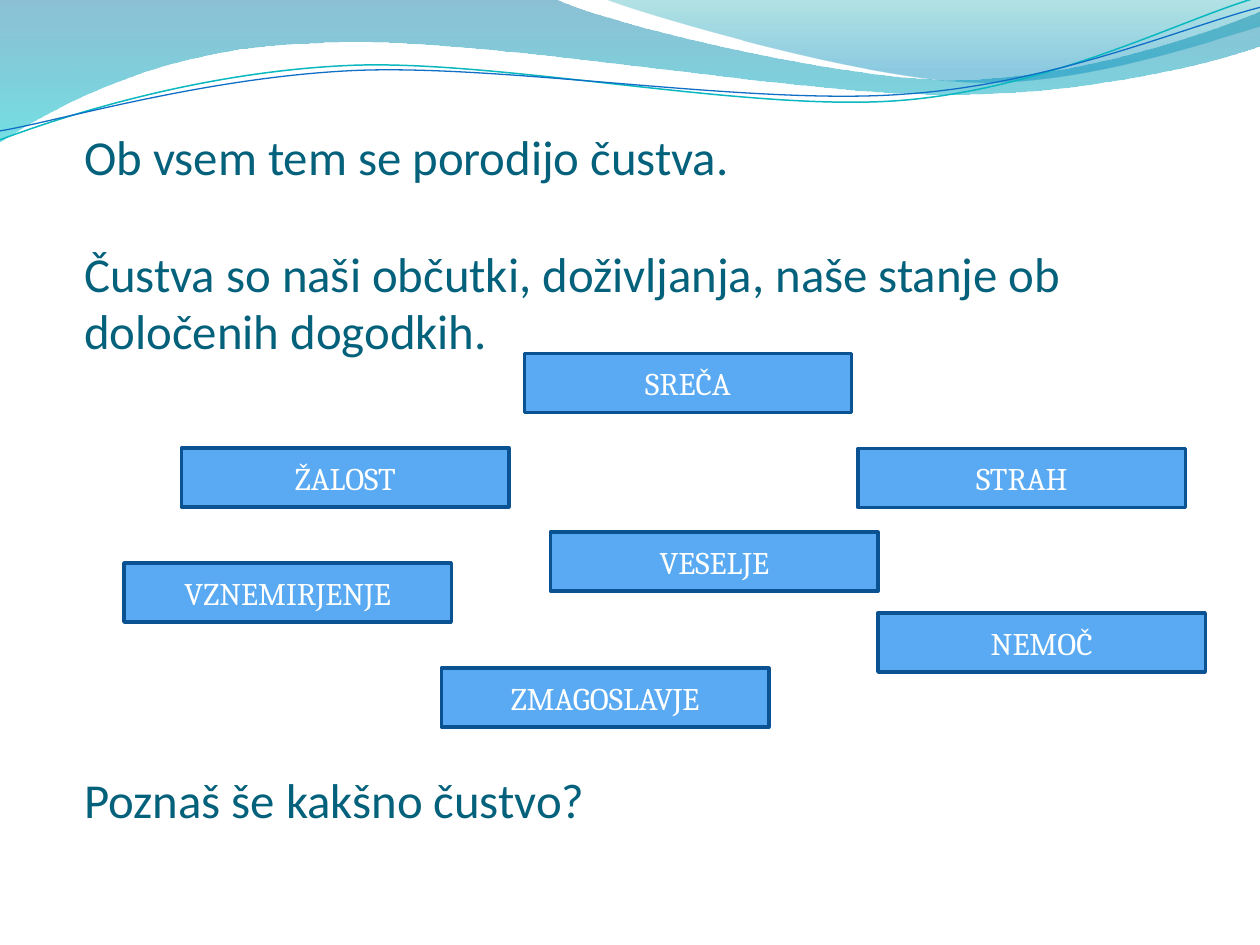
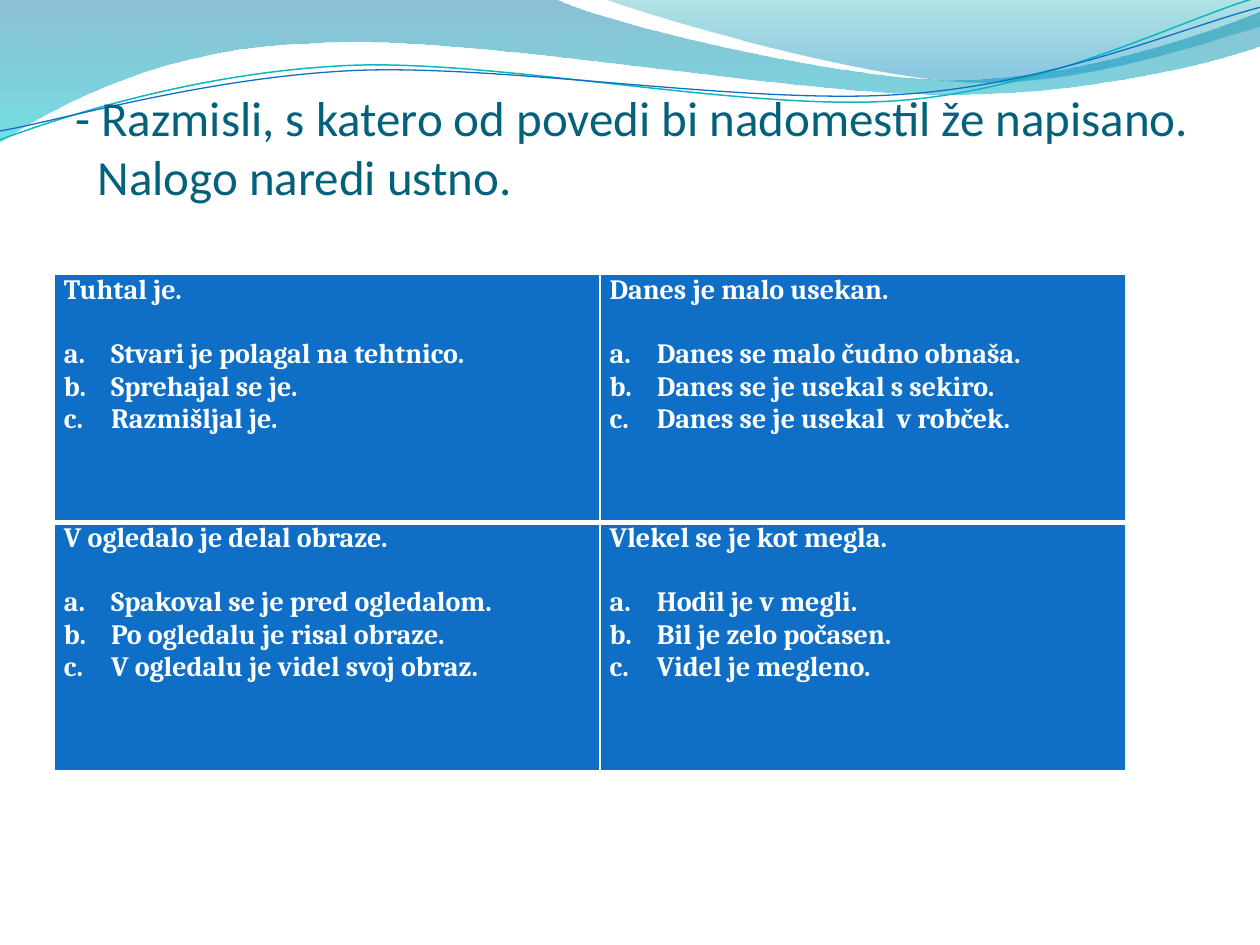
import pptx
import pptx.util
import pptx.dml.color
import pptx.enum.shapes
import pptx.enum.text
import pptx.oxml.ns
import lxml.etree

Cm = pptx.util.Cm
Pt = pptx.util.Pt

WHITE, TITLE, TABLE_BLUE = "FFFFFF", "04617B", "0F6FC6"
BOX_FILL, BOX_LINE = "59AAF2", "0B5292"
TITLE_FONT, BODY_FONT = "Calibri", "Cambria"

# Outlines in cm: a start point, then steps of one point (line) or three (curve).
WAVE_BAND = [
    (0, 0), [(11.18, -0.03)],
    [(12.09, 0.43), (16.87, 1.6), (19.25, 1.6)],
    [(21.67, 1.6), (24.33, 0.66), (25.4, 0.23)],
    [(25.43, 0.91)],
    [(24.97, 1.12), (22.1, 1.93), (18.95, 1.9)],
    [(15.8, 1.9), (9.7, 0.71), (6.53, 0.86)],
    [(3.28, 0.91), (1.17, 2.11), (-0.03, 2.87)],
]
WAVE_GLOW = [
    (12.17, -0.03),
    [(12.93, 0.28), (17.32, 1.57), (19.53, 1.65)],
    [(21.74, 1.75), (24.41, 0.81), (25.4, 0.53)],
    [(25.4, 0)],
]
TEAL_CURVE = [
    (0, 2.82),
    [(1.22, 2.36), (4.01, 1.45), (7.04, 1.32)],
    [(10.03, 1.19), (15.06, 2.26), (18.11, 2.03)],
    [(21.16, 1.8), (23.83, 0.38), (25.35, -0.05)],
]
BLUE_CURVE = [
    (0, 2.64),
    [(1.19, 2.44), (4.17, 1.55), (7.19, 1.42)],
    [(10.24, 1.3), (15.16, 2.13), (18.21, 1.9)],
    [(21.23, 1.7), (23.9, 0.53), (25.4, 0.15)],
]
# Gradient stops: position, colour, opacity in percent
WAVE_FILLS = [
    (WAVE_BAND, [(0, "0074A1", 45), (1, "00C6CF", 55)]),
    (WAVE_GLOW, [(0, "00A1A9", 30), (0.8, "008BBF", 45)]),
]
WAVE_LINES = [(TEAL_CURVE, "0AB8BF", 0.85), (BLUE_CURVE, "0F6FC6", 0.75)]

# Title lines: text, space before in points, left indent in cm
FEELINGS_TEXT = [
    ("Ob vsem tem se porodijo čustva.", 0, 0),
    ("Čustva so naši občutki, doživljanja, naše stanje ob določenih dogodkih.", 33.6, 0),
    ("Poznaš še kakšno čustvo?", 235.5, 0),
]
TASK_TEXT = [
    ("- Razmisli, s katero od povedi bi nadomestil že napisano.", 0, 0),
    ("Nalogo naredi ustno.", 0, 0.45),
]

FEELING_SIZE = (6.6, 1.19)
FEELINGS = [
    ("SREČA", 10.57, 7.13),
    ("STRAH", 17.3, 9.04),
    ("VESELJE", 11.1, 10.73),
    ("VZNEMIRJENJE", 2.5, 11.35),
    ("ŽALOST", 3.66, 9.03),
    ("NEMOČ", 17.7, 12.36),
    ("ZMAGOSLAVJE", 8.9, 13.47),
]

COLUMN_WIDTHS, ROW_HEIGHT = (11, 10.6), 5
QUESTIONS = [
    [
        ("Tuhtal je.",
         ["Stvari je polagal na tehtnico.", "Sprehajal se je.", "Razmišljal je."]),
        ("Danes je malo usekan.",
         ["Danes se malo čudno obnaša.", "Danes se je usekal s sekiro.",
          "Danes se je usekal  v robček."]),
    ],
    [
        ("V ogledalo je delal obraze.",
         ["Spakoval se je pred ogledalom.", "Po ogledalu je risal obraze.",
          "V ogledalu je videl svoj obraz."]),
        ("Vlekel se je kot megla.",
         ["Hodil je v megli.", "Bil je zelo počasen.", "Videl je megleno."]),
    ],
]


def color(value):
    return pptx.dml.color.RGBColor.from_string(value)


def add_xml(parent, tag, **attributes):
    return lxml.etree.SubElement(parent, pptx.oxml.ns.qn(tag), attributes)


def style(para, font, size, value, bold=False):
    para.font.name, para.font.size, para.font.bold = font, Pt(size), bold
    para.font.color.rgb = color(value)


def add_outline(page, outline, close):
    """Draw straight segments, then merge each group of three into a curve."""
    start, *steps = outline
    builder = page.shapes.build_freeform(Cm(start[0]), Cm(start[1]))
    builder.add_line_segments(
        [(Cm(x), Cm(y)) for step in steps for x, y in step], close=close)
    shape = builder.convert_to_shape()
    shape.shadow.inherit = False
    segments = iter(shape._element.spPr.xpath(".//a:lnTo"))
    for step in steps:
        group = [next(segments) for _ in step]
        if len(group) == 3:
            curve = lxml.etree.Element(pptx.oxml.ns.qn("a:cubicBezTo"))
            group[0].addprevious(curve)
            for segment in group:
                curve.append(segment[0])
                segment.getparent().remove(segment)
    return shape


def add_waves(page):
    shapes = []
    for outline, stops in WAVE_FILLS:
        shape = add_outline(page, outline, True)
        shape.line.fill.background()
        shape.fill.gradient()
        shape.fill.gradient_angle = 270
        for stop, (position, value, _) in zip(shape.fill.gradient_stops, stops):
            stop.position, stop.color.rgb = position, color(value)
        tints = shape._element.spPr.xpath("a:gradFill/a:gsLst/a:gs/a:srgbClr")
        for tint, (_, _, opacity) in zip(tints, stops):
            add_xml(tint, "a:alpha", val=str(opacity * 1000))
        shapes.append(shape)
    for outline, value, width in WAVE_LINES:
        shape = add_outline(page, outline, False)
        shape.fill.background()
        shape.line.color.rgb, shape.line.width = color(value), Pt(width)
        shapes.append(shape)
    return shapes


def share_on_layout(shapes, layout):
    """Move shapes from a page to its layout, so every page shows them."""
    for shape in shapes:
        layout.shapes._spTree.append(shape._element)


def add_title(page, lines, left, top, width, height, size, spacing=1.0):
    box = page.shapes.add_textbox(Cm(left), Cm(top), Cm(width), Cm(height))
    frame = box.text_frame
    frame.word_wrap = True
    frame.margin_left = frame.margin_right = frame.margin_top = frame.margin_bottom = 0
    for index, (text, before, indent) in enumerate(lines):
        para = frame.add_paragraph() if index else frame.paragraphs[0]
        para.text = text
        para.space_before, para.line_spacing = Pt(before), spacing
        para._p.get_or_add_pPr().set("marL", str(Cm(indent)))
        style(para, TITLE_FONT, size, TITLE)


def add_feeling(page, text, left, top):
    box = page.shapes.add_shape(
        pptx.enum.shapes.MSO_SHAPE.RECTANGLE, Cm(left), Cm(top), *map(Cm, FEELING_SIZE))
    box.shadow.inherit = False
    box.fill.solid()
    box.fill.fore_color.rgb = color(BOX_FILL)
    box.line.color.rgb, box.line.width = color(BOX_LINE), Pt(2)
    box.text_frame.vertical_anchor = pptx.enum.text.MSO_ANCHOR.MIDDLE
    para = box.text_frame.paragraphs[0]
    para.text, para.alignment = text, pptx.enum.text.PP_ALIGN.CENTER
    style(para, BODY_FONT, 18, WHITE)


def set_borders(cell, top, bottom):
    properties = cell._tc.get_or_add_tcPr()
    for side, width in (("L", 1), ("R", 1), ("T", top), ("B", bottom)):
        line = add_xml(properties, "a:ln" + side, w=str(Pt(width)))
        add_xml(add_xml(line, "a:solidFill"), "a:srgbClr", val=WHITE)


def fill_cell(cell, sentence, answers):
    cell.fill.solid()
    cell.fill.fore_color.rgb = color(TABLE_BLUE)
    cell.margin_left = cell.margin_right = Cm(0.19)
    cell.margin_top = cell.margin_bottom = 0
    frame = cell.text_frame
    frame.text = sentence
    for index, answer in enumerate(answers):
        para = frame.add_paragraph()
        para.text = answer
        properties = para._p.get_or_add_pPr()
        properties.set("marL", str(Cm(0.95)))
        properties.set("indent", str(-Cm(0.95)))
        add_xml(properties, "a:buAutoNum", type="alphaLcPeriod")
        para.space_before = Pt(0 if index else 18.4)
    for para in frame.paragraphs:
        style(para, BODY_FONT, 16, WHITE, bold=True)


def add_questions(page, left, top):
    rows, columns = len(QUESTIONS), len(COLUMN_WIDTHS)
    table = page.shapes.add_table(
        rows, columns, Cm(left), Cm(top),
        Cm(sum(COLUMN_WIDTHS)), Cm(rows * ROW_HEIGHT)).table
    table.first_row = table.horz_banding = False
    for column, width in zip(table.columns, COLUMN_WIDTHS):
        column.width = Cm(width)
    for row_index, questions in enumerate(QUESTIONS):
        table.rows[row_index].height = Cm(ROW_HEIGHT)
        for column_index, (sentence, answers) in enumerate(questions):
            cell = table.cell(row_index, column_index)
            set_borders(cell, top=3 if row_index else 1, bottom=1 if row_index else 3)
            fill_cell(cell, sentence, answers)


def main():
    deck = pptx.Presentation()
    deck.slide_width, deck.slide_height = Cm(25.4), Cm(19.05)
    blank = deck.slide_layouts[6]

    feelings_page = deck.slides.add_slide(blank)
    share_on_layout(add_waves(feelings_page), blank)
    add_title(feelings_page, FEELINGS_TEXT, 1.7, 2.62, 22.86, 14.1, 27.9, 0.98)
    for feeling in FEELINGS:
        add_feeling(feelings_page, *feeling)

    task_page = deck.slides.add_slide(blank)
    add_questions(task_page, 1.1, 5.53)
    add_title(task_page, TASK_TEXT, 1.52, 1.76, 23.2, 2.5, 28)

    deck.save("out.pptx")


if __name__ == "__main__":
    main()
